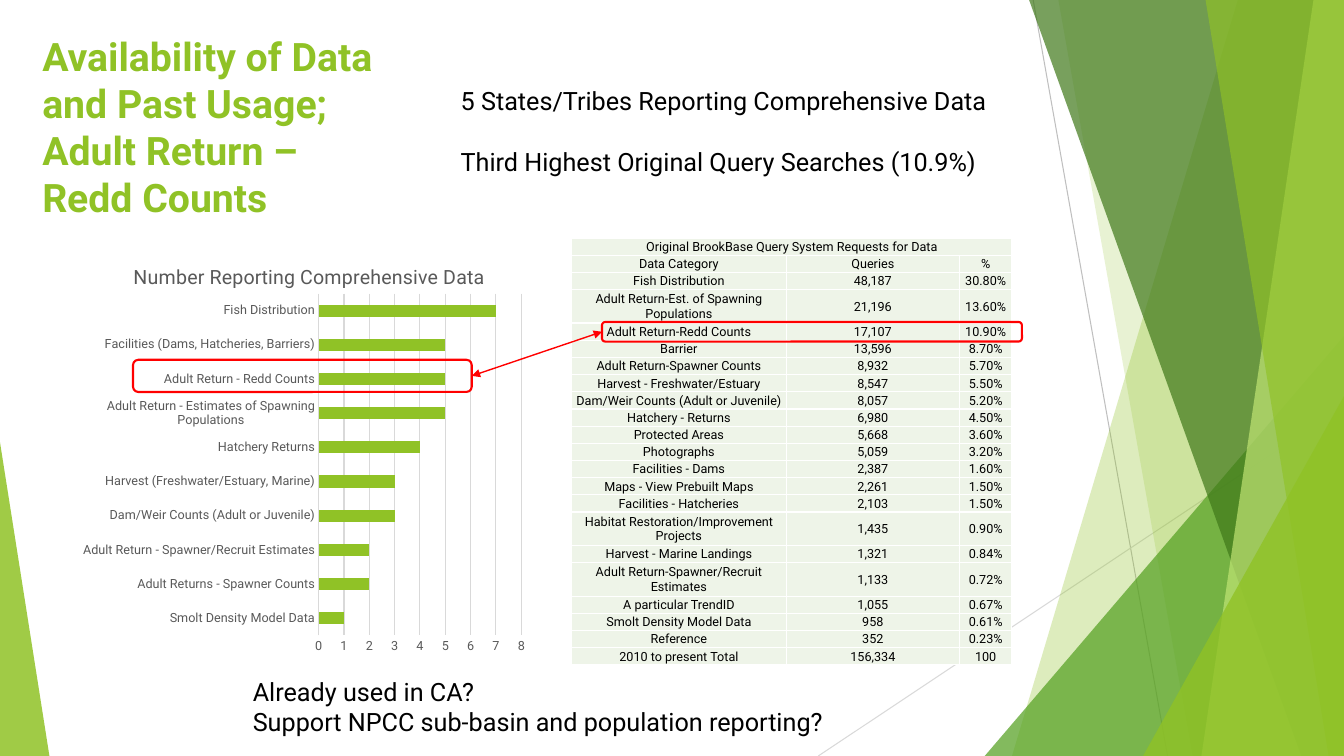
from lxml import etree
from pptx import Presentation
from pptx import util as u
from pptx.chart import data as chart_data
from pptx.dml import color
from pptx.enum import chart as chart_enum, shapes, text
from pptx.oxml import ns, parse_xml

Pt = u.Pt
FONT = "Roboto"
COLOURS = {
    "lime": "90C226", "green": "54A021", "forest": "3F7819", "pale": "C0E474",
    "cell": "EEF4E8", "white": "FFFFFF", "black": "000000", "red": "FF0000",
    "grey": "595959", "grid": "D9D9D9", "rule": "BFBFBF",
}
WIDTH, HEIGHT = 960, 540

REPORTING = [
    ("Smolt Density Model Data", 1),
    ("Adult Returns - Spawner Counts", 2),
    ("Adult Return - Spawner/Recruit Estimates", 2),
    ("Dam/Weir Counts (Adult or Juvenile)", 3),
    ("Harvest (Freshwater/Estuary, Marine)", 3),
    ("Hatchery Returns", 4),
    ("Adult Return - Estimates of Spawning Populations", 5),
    ("Adult Return - Redd Counts", 5),
    ("Facilities (Dams, Hatcheries, Barriers)", 5),
    ("Fish Distribution", 7),
]
REQUESTS = [
    ("Original BrookBase Query System Requests for Data", "", ""),
    ("Data Category", "Queries", "%"),
    ("Fish Distribution", "48,187", "30.80%"),
    ("Adult Return-Est. of Spawning Populations", "21,196", "13.60%"),
    ("Adult Return-Redd Counts", "17,107", "10.90%"),
    ("Barrier", "13,596", "8.70%"),
    ("Adult Return-Spawner Counts", "8,932", "5.70%"),
    ("Harvest - Freshwater/Estuary", "8,547", "5.50%"),
    ("Dam/Weir Counts (Adult or Juvenile)", "8,057", "5.20%"),
    ("Hatchery - Returns", "6,980", "4.50%"),
    ("Protected Areas", "5,668", "3.60%"),
    ("Photographs", "5,059", "3.20%"),
    ("Facilities - Dams", "2,387", "1.60%"),
    ("Maps - View Prebuilt Maps", "2,261", "1.50%"),
    ("Facilities - Hatcheries", "2,103", "1.50%"),
    ("Habitat Restoration/Improvement Projects", "1,435", "0.90%"),
    ("Harvest - Marine Landings", "1,321", "0.84%"),
    ("Adult Return-Spawner/Recruit Estimates", "1,133", "0.72%"),
    ("A particular TrendID", "1,055", "0.67%"),
    ("Smolt Density Model Data", "958", "0.61%"),
    ("Reference", "352", "0.23%"),
    ("2010 to present Total", "156,334", "100"),
]
TALL_ROWS = (3, 15, 17)


def rgb(name):
    return color.RGBColor.from_string(COLOURS[name])


def points(*lengths):
    return [Pt(length) for length in lengths]


def style_font(font, size, colour, bold=False):
    font.name, font.size, font.bold = FONT, Pt(size), bold
    font.color.rgb = rgb(colour)


def add_span(para, words, size, colour="black", bold=False):
    span = para.add_run()
    span.text = words
    style_font(span.font, size, colour, bold)


def paint(shape, colour, opacity):
    shape.shadow.inherit = False
    shape.line.fill.background()
    shape.fill.solid()
    shape.fill.fore_color.rgb = rgb(colour)
    tint = shape.fill._xPr.find(".//" + ns.qn("a:srgbClr"))
    etree.SubElement(tint, ns.qn("a:alpha")).set("val", str(opacity * 1000))


def add_veil(page, top_left, bottom_left, colour, opacity):
    outline = page.shapes.build_freeform(Pt(top_left), 0)
    outline.add_line_segments(
        [points(WIDTH, 0), points(WIDTH, HEIGHT), points(bottom_left, HEIGHT)])
    paint(outline.convert_to_shape(), colour, opacity)


def add_corner(page, left, top, width, apex, colour, opacity):
    corner = page.shapes.add_shape(
        shapes.MSO_SHAPE.ISOSCELES_TRIANGLE, *points(left, top, width, HEIGHT - top))
    corner.adjustments[0] = apex
    paint(corner, colour, opacity)


def add_line(page, start, end, colour, weight):
    line = page.shapes.add_connector(
        shapes.MSO_CONNECTOR.STRAIGHT, *points(*start, *end))
    line.line.color.rgb = rgb(colour)
    line.line.width = Pt(weight)
    etree.SubElement(line._element.spPr, ns.qn("a:effectLst"))
    return line


def add_backdrop(page):
    add_line(page, (738, 0), (834, HEIGHT), "rule", 0.75)
    add_line(page, (WIDTH, 290), (584.5, HEIGHT), "grid", 0.75)
    add_veil(page, 884.2, 722.9, "lime", 30)
    add_veil(page, 756, 851.8, "lime", 20)
    add_corner(page, 703.4, 240, 256.6, 1, "green", 72)
    add_veil(page, 735.1, 929.5, "forest", 70)
    add_veil(page, 938.2, 858.2, "pale", 70)
    add_veil(page, 861.1, 949, "lime", 65)
    add_corner(page, 816.5, 283, 143.5, 1, "lime", 80)
    add_corner(page, 0, 316, 35.3, 0, "lime", 85)


def fill_title(page, lines):
    title = page.shapes.title
    title.left, title.top, title.width, title.height = points(23, 19.5, 677, 103.5)
    frame = title.text_frame
    frame.auto_size = text.MSO_AUTO_SIZE.NONE
    frame.vertical_anchor = text.MSO_ANCHOR.TOP
    para = frame.paragraphs[0]
    para.alignment = text.PP_ALIGN.LEFT
    for index, line in enumerate(lines):
        if index:
            para.add_line_break()
        add_span(para, line, 28, "lime", True)


def add_note(page, place, lines, gap=0):
    frame = page.shapes.add_textbox(*points(*place)).text_frame
    frame.word_wrap = False
    frame.auto_size = text.MSO_AUTO_SIZE.SHAPE_TO_FIT_TEXT
    for index, line in enumerate(lines):
        para = frame.add_paragraph() if index else frame.paragraphs[0]
        para.space_before = Pt(gap if index else 0)
        add_span(para, line, 18)


def format_cell(cell, words):
    cell.margin_left = cell.margin_right = cell.margin_top = Pt(0.72)
    cell.margin_bottom = 0
    cell.vertical_anchor = text.MSO_ANCHOR.MIDDLE
    for side in "LRTB":
        border = etree.SubElement(
            cell._tc.get_or_add_tcPr(), ns.qn(f"a:ln{side}"), w=str(Pt(1)))
        ink = etree.SubElement(border, ns.qn("a:solidFill"))
        etree.SubElement(ink, ns.qn("a:srgbClr"), val=COLOURS["white"])
    cell.fill.solid()
    cell.fill.fore_color.rgb = rgb("cell")
    para = cell.text_frame.paragraphs[0]
    para.alignment = text.PP_ALIGN.CENTER
    para.font.size = Pt(9)
    if words:
        add_span(para, words, 9)


def add_requests_table(page):
    table = page.shapes.add_table(
        len(REQUESTS), 3, *points(408.2, 170, 314.6, 305.4)).table
    table.first_row = table.horz_banding = False
    for column, width in zip(table.columns, (153.4, 123.8, 37.4)):
        column.width = Pt(width)
    for row_index, entries in enumerate(REQUESTS):
        table.rows[row_index].height = Pt(23.9 if row_index in TALL_ROWS else 12.3)
        for column_index, words in enumerate(entries):
            format_cell(table.cell(row_index, column_index), words)
    table.cell(0, 0).merge(table.cell(0, 2))


def manual_layout(inner=False, **fractions):
    target = '<c:layoutTarget val="inner"/>' if inner else ""
    modes = '<c:xMode val="edge"/><c:yMode val="edge"/>'
    sizes = "".join(f'<c:{key} val="{value}"/>' for key, value in fractions.items())
    return parse_xml(f'<c:layout {ns.nsdecls("c")}><c:manualLayout>'
                     f"{target}{modes}{sizes}</c:manualLayout></c:layout>")


def place_layout(parent, layout, position):
    for old in parent.findall(ns.qn("c:layout")):
        parent.remove(old)
    parent.insert(position, layout)


def add_reporting_chart(page):
    counts = chart_data.CategoryChartData()
    counts.categories = [name for name, _ in REPORTING]
    counts.add_series("Series 1", [count for _, count in REPORTING])
    chart = page.shapes.add_chart(
        chart_enum.XL_CHART_TYPE.BAR_CLUSTERED,
        *points(53.3, 170, 329, 305.3), counts).chart
    style_font(chart.font, 10, "black")
    chart.has_legend = False
    chart.has_title = True
    add_span(chart.chart_title.text_frame.paragraphs[0],
             "Number Reporting Comprehensive Data", 14, "grey")
    place_layout(chart.chart_title._element, manual_layout(x=0.12, y=0.05), 1)
    place_layout(chart._chartSpace.chart.plotArea,
                 manual_layout(True, x=0.53, y=0.13, w=0.44, h=0.8), 0)
    plot = chart.plots[0]
    plot.gap_width = 182
    plot.vary_by_categories = False
    bars = plot.series[0].format.fill
    bars.solid()
    bars.fore_color.rgb = rgb("lime")
    names, values = chart.category_axis, chart.value_axis
    for axis in (names, values):
        axis.major_tick_mark = axis.minor_tick_mark = chart_enum.XL_TICK_MARK.NONE
        style_font(axis.tick_labels.font, 9, "grey")
    values.minimum_scale, values.maximum_scale, values.major_unit = 0, 8, 1
    values.format.line.fill.background()
    for line in (names.format.line, values.major_gridlines.format.line):
        line.color.rgb = rgb("grid")
        line.width = Pt(0.75)


def add_highlight(page, *place):
    box = page.shapes.add_shape(shapes.MSO_SHAPE.ROUNDED_RECTANGLE, *points(*place))
    box.shadow.inherit = False
    box.fill.background()
    box.line.color.rgb = rgb("red")
    box.line.width = Pt(1.5)
    return box


def link_highlights(page, first, second):
    arrow = add_line(page, (337, 268.5), (430, 237), "red", 1)
    arrow.begin_connect(first, 3)
    arrow.end_connect(second, 1)
    for end in ("headEnd", "tailEnd"):
        etree.SubElement(arrow.line._ln, ns.qn(f"a:{end}"), type="triangle")


def main():
    deck = Presentation()
    deck.slide_width, deck.slide_height = points(WIDTH, HEIGHT)
    page = deck.slides.add_slide(deck.slide_layouts[5])
    add_backdrop(page)
    fill_title(page, ["Availability of Data", "and Past Usage;", "Adult Return –", "Redd Counts"])
    add_requests_table(page)
    add_note(page, (322, 57.6, 394, 72.7), [
        "5 States/Tribes Reporting Comprehensive Data",
        "Third Highest Original Query Searches (10.9%)"], 21.4)
    add_reporting_chart(page)
    chart_mark = add_highlight(page, 95, 257, 242, 23)
    table_mark = add_highlight(page, 430, 230, 300, 14)
    link_highlights(page, chart_mark, table_mark)
    add_note(page, (173.5, 479.5, 422.6, 51), [
        "Already used in CA?", "Support NPCC sub-basin and population reporting?"])
    deck.save("out.pptx")


if __name__ == "__main__":
    main()
